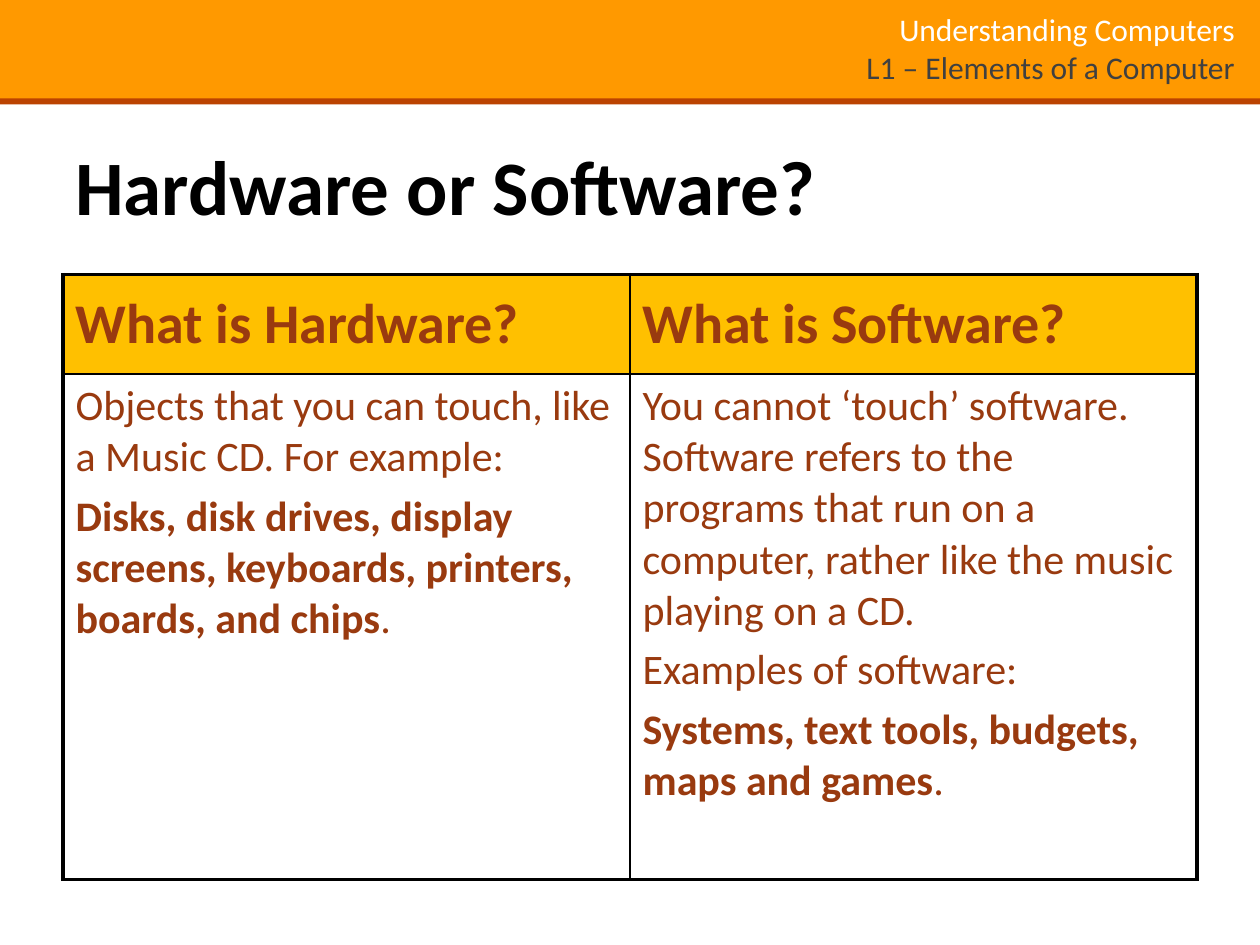
from lxml import etree
from pptx import Presentation
from pptx.dml.color import RGBColor
from pptx.enum.shapes import MSO_SHAPE
from pptx.enum.text import MSO_ANCHOR, PP_ALIGN
from pptx.oxml.ns import qn
from pptx.util import Inches, Pt

RECTANGLE = MSO_SHAPE.RECTANGLE
TOP, MIDDLE = MSO_ANCHOR.TOP, MSO_ANCHOR.MIDDLE
LEFT, RIGHT = PP_ALIGN.LEFT, PP_ALIGN.RIGHT

FONT = "Calibri"
COLORS = {
    "banner": "FF9900",
    "stripe": "BB4301",
    "course": "FFFFFF",
    "lesson": "404040",
    "title": "000000",
    "border": "000000",
    "heading": "FFC000",
    "body": "993A0F",
}


def rgb(name):
    return RGBColor.from_string(COLORS[name])


def write_text(frame, paragraphs, size, color, bold=False, align=LEFT, anchor=TOP, gap=0):
    frame.word_wrap = True
    frame.vertical_anchor = anchor
    for index, pieces in enumerate(paragraphs):
        paragraph = frame.paragraphs[0] if index == 0 else frame.add_paragraph()
        paragraph.alignment = align
        paragraph.space_before = Pt(gap if index else 0)
        for text, changes in pieces:
            if text == "\n":
                paragraph.add_line_break()
                continue
            run = paragraph.add_run()
            run.text = text
            run.font.name = FONT
            run.font.size = Pt(size)
            run.font.bold = changes.get("bold", bold)
            run.font.color.rgb = rgb(changes.get("color", color))


class SlideBuilder:
    def __init__(self, slide):
        self.slide = slide

    def bar(self, left, top, width, height, color):
        bar = self.slide.shapes.add_shape(
            RECTANGLE, Inches(left), Inches(top), Inches(width), Inches(height))
        bar.shadow.inherit = False
        bar.fill.solid()
        bar.fill.fore_color.rgb = rgb(color)
        bar.line.fill.background()

    def text(self, left, top, width, height, paragraphs, **style):
        box = self.slide.shapes.add_textbox(
            Inches(left), Inches(top), Inches(width), Inches(height))
        write_text(box.text_frame, paragraphs, **style)

    def border(self, cell, side, width):
        line = etree.SubElement(
            cell._tc.get_or_add_tcPr(), qn(f"a:ln{side}"), w=str(Pt(width)))
        fill = etree.SubElement(line, qn("a:solidFill"))
        etree.SubElement(fill, qn("a:srgbClr"), val=COLORS["border"])

    def table(self, left, top, widths, heights, rows, outer=2.25, inner=1):
        table = self.slide.shapes.add_table(
            len(heights), len(widths), Inches(left), Inches(top),
            Inches(sum(widths)), Inches(sum(heights))).table
        table.first_row = table.horz_banding = False
        for column, width in zip(table.columns, widths):
            column.width = Inches(width)
        for row, height in zip(table.rows, heights):
            row.height = Inches(height)
        last_row, last_column = len(heights) - 1, len(widths) - 1
        for r, row in enumerate(rows):
            for c, paragraphs in enumerate(row):
                cell = table.cell(r, c)
                edges = {"L": c == 0, "R": c == last_column,
                         "T": r == 0, "B": r == last_row}
                for side, is_outer in edges.items():
                    self.border(cell, side, outer if is_outer else inner)
                if r == 0:
                    cell.fill.solid()
                    cell.fill.fore_color.rgb = rgb("heading")
                    write_text(cell.text_frame, paragraphs, 32, "body", bold=True)
                else:
                    cell.fill.background()
                    write_text(cell.text_frame, paragraphs, 24, "body", gap=4.8)
                cell.vertical_anchor = MIDDLE if r == 0 else TOP
                cell.margin_left = cell.margin_right = Inches(0.1)
                cell.margin_top = cell.margin_bottom = Inches(0.05)


def main():
    deck = Presentation()
    deck.slide_width, deck.slide_height = Inches(10), Inches(7.5)
    builder = SlideBuilder(deck.slides.add_slide(deck.slide_layouts[6]))

    builder.bar(-0.04, 0.77, 10.06, 0.06, "stripe")
    builder.bar(-0.04, -0.01, 10.06, 0.79, "banner")
    builder.text(
        4.99, 0.03, 4.91, 0.69,
        [[("Understanding Computers", {}), ("\n", {}),
          ("L1 – Elements of a Computer", {"color": "lesson"})]],
        size=18, color="course", align=RIGHT)
    builder.text(0.5, 1.05, 9, 1.25, [[("Hardware or Software?", {})]],
                 size=44, color="title", bold=True)

    strong = {"bold": True}
    headings = [[[("What is Hardware?", {})]], [[("What is Software?", {})]]]
    hardware = [
        [("Objects that you can touch, like a Music CD. For example:", {})],
        [("Disks, disk drives, display screens, keyboards, printers, "
          "boards, and chips", strong), (".", {})],
    ]
    software = [
        [("You cannot ‘touch’ software. Software refers to the programs that "
          "run on a computer, rather like the music playing on a CD.", {})],
        [("Examples of software:", {})],
        [("Systems, text tools, budgets, maps and games", strong), (".", {})],
    ]
    builder.table(0.5, 2.18, [4.5, 4.5], [0.79, 4.01],
                  [headings, [hardware, software]])
    deck.save("out.pptx")


if __name__ == "__main__":
    main()
